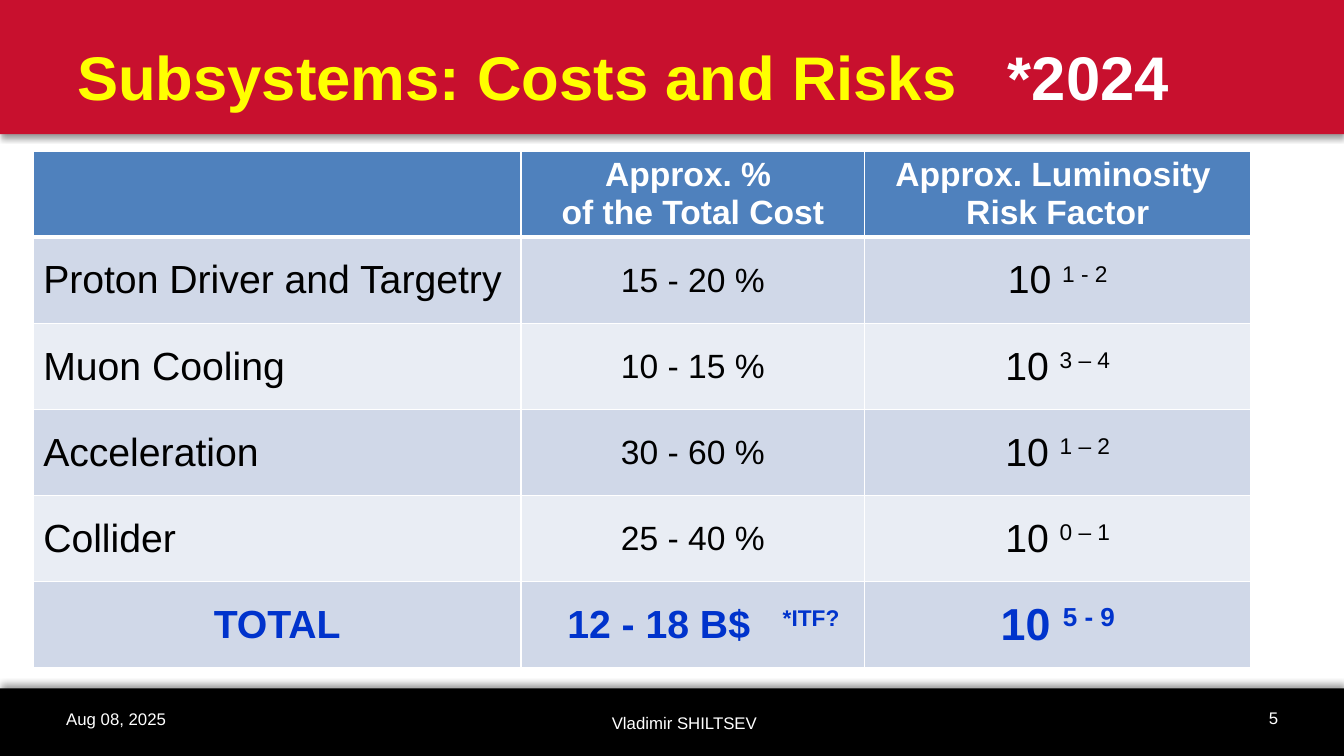
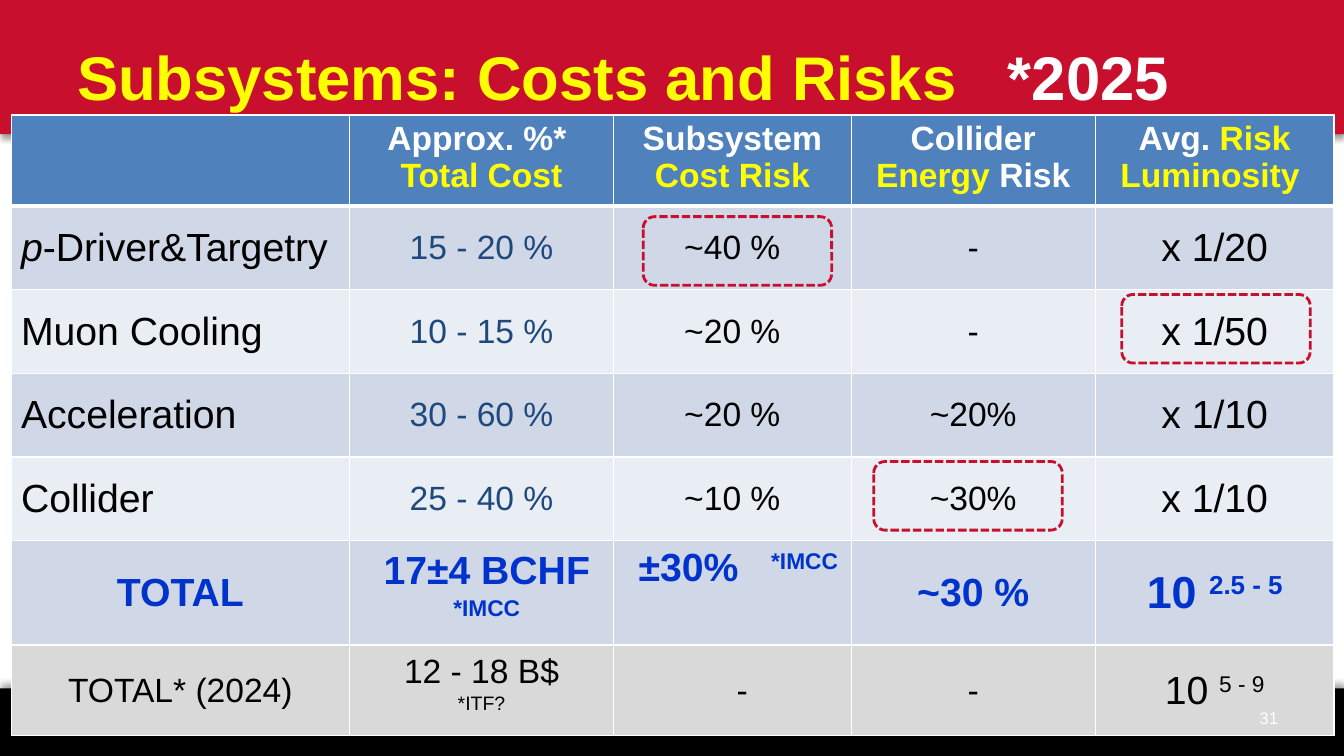
from pptx import Presentation
from pptx.dml.color import RGBColor as Rgb
from pptx.enum.dml import MSO_LINE as Dash
from pptx.enum.shapes import MSO_SHAPE as Kind
from pptx.enum.text import MSO_ANCHOR as Anchor, PP_ALIGN as Align
from pptx.oxml import parse_xml
from pptx.oxml.ns import nsdecls
from pptx.util import Cm, Pt

HUES = {
    "red": "C8102E", "black": "000000", "white": "FFFFFF", "yellow": "FFFF00",
    "head": "4F81BD", "odd": "D0D8E8", "even": "E9EDF4", "grey": "D9D9D9",
    "blue": "0033CC", "navy": "1F497D",
}

# Runs are split by "|"; a leading sign changes the format of a run
MARKS = {
    "^": {"baseline": "30000"},
    ">": {"spc": "1560"},
    "/": {"italic": True},
    "!": {"tone": "yellow"},
    "#": {"tone": "white"},
}

# Text formats
TITLE = {"size": Pt(44), "bold": True, "tone": "yellow"}
SMALL = {"size": Pt(12), "bold": False, "tone": "white"}
HEAD = {"size": Pt(24), "bold": True, "tone": "white"}
BODY = {"bold": False, "tone": "black"}
TOTAL = {"bold": True, "tone": "blue"}

# Shared layout, in cm: left, top, width, height
WIDE, HIGH = 33.87, 19.05
BANDS = [("black", 17.35, 1.7, 270), ("red", 0, 3.38, 90)]
SPOTS = {
    "title": ((1.7, 0.43, 29.03, 2.97), TITLE, Align.LEFT),
    "date": ((1.42, 17.6, 3.38, 1.02), SMALL, Align.LEFT),
    "name": ((14.25, 17.7, 5.08, 1.02), SMALL, Align.RIGHT),
    "page": ((27.38, 17.58, 5.08, 1.02), SMALL, Align.RIGHT),
}
YEAR_TAB = 23.45

DECK = [
    {
        "text": {"title": "Subsystems: Costs and Risks\t|#*2024", "page": "5",
                 "date": "Aug 08, 2025", "name": "Vladimir SHILTSEV"},
        "at": (0.84, 3.81),
        "cols": [12.29, 8.66, 9.73],
        "rows": [2.17] * 6,
        "sizes": [28, 24, 28],
        "tones": {},
        "cells": [
            ["", "Approx. % \nof the Total Cost", "Approx. Luminosity \nRisk Factor"],
            ["Proton Driver and Targetry", "15 - 20 %", "10 |^1 - 2"],
            ["Muon Cooling", "10 - 15 %", "10 |^3 – 4"],
            ["Acceleration", "30 - 60 %", "10 |^1 – 2"],
            ["Collider", "25 - 40 %", "10 |^0 – 1"],
            ["TOTAL", "12 - 18 B$|> |^*ITF?", "10 |^5 - 9"],
        ],
        "shifts": {(5, 1): 0.28},
        "tops": [],
        "rings": [],
    },
    {
        "text": {"title": "Subsystems: Costs and Risks\t|#*2025", "page": "31"},
        "at": (0.28, 2.9),
        "cols": [8.53, 6.65, 5.99, 6.15, 6.02],
        "rows": [2.24] + [2.11] * 4 + [2.46, 2.11],
        "sizes": [28, 24, 24, 24, 28],
        "tones": {1: "navy"},
        "cells": [
            ["", "Approx. %* \n!Total Cost", "Subsystem |!Cost Risk",
             "Collider |!Energy| Risk", "Avg. |!Risk Luminosity "],
            ["/p|-Driver&Targetry", "15 - 20 %", "~40 %", "-", "x 1/20"],
            ["Muon Cooling", "10 - 15 %", "~20 %", "-", "x 1/50"],
            ["Acceleration", "30 - 60 %", "~20 %", "~20%", "x 1/10"],
            ["Collider", "25 - 40 %", "~10 %", "~30%", "x 1/10"],
            ["TOTAL", "17±4 BCHF\n^*IMCC", "±30%|> |^*IMCC", "~30 %", "10 |^2.5 - 5"],
            ["TOTAL* (2024)", "12 - 18 B$\n^*ITF?", "-", "-", "10 |^5 - 9"],
        ],
        "shifts": {(5, 1): 0.13, (5, 2): 0.15, (6, 2): 0.25},
        "tops": [(5, 2)],
        "rings": [(16.21, 5.46), (22.02, 11.63), (28.27, 7.42)],
    },
]


def write(frame, text, style, align):
    for i, line in enumerate(text.split("\n")):
        para = frame.paragraphs[0] if i == 0 else frame.add_paragraph()
        para.alignment = align
        if "\t" in line:
            para._p.get_or_add_pPr().append(parse_xml(
                f'<a:tabLst {nsdecls("a")}><a:tab pos="{Cm(YEAR_TAB)}" algn="l"/></a:tabLst>'))
        for part in line.split("|"):
            mark = MARKS.get(part[:1], {})
            run = para.add_run()
            run.text = part[1:] if mark else part
            for key, val in {"name": "Arial", **style, **mark}.items():
                if key == "tone":
                    run.font.color.rgb = Rgb.from_string(HUES[val])
                elif key in ("baseline", "spc"):
                    run._r.get_or_add_rPr().set(key, val)
                else:
                    setattr(run.font, key, val)


def place(slide, spot, text):
    at, style, align = SPOTS[spot]
    frame = slide.shapes.add_textbox(*map(Cm, at)).text_frame
    frame.word_wrap = True
    frame.vertical_anchor = Anchor.MIDDLE
    write(frame, text, style, align)


deck = Presentation()
deck.slide_width, deck.slide_height = Cm(WIDE), Cm(HIGH)

for plan in DECK:
    slide = deck.slides.add_slide(deck.slide_layouts[6])

    # Bands with a soft shadow towards the middle
    for hue, top, high, turn in BANDS:
        band = slide.shapes.add_shape(Kind.RECTANGLE, 0, Cm(top), Cm(WIDE), Cm(high))
        band.fill.solid()
        band.fill.fore_color.rgb = Rgb.from_string(HUES[hue])
        band.line.fill.background()
        band._element.spPr.append(parse_xml(
            f'<a:effectLst {nsdecls("a")}><a:outerShdw blurRad="{Pt(4)}" dist="{Pt(3)}" '
            f'dir="{turn * 60000}" rotWithShape="0"><a:srgbClr val="{HUES["black"]}">'
            '<a:alpha val="40000"/></a:srgbClr></a:outerShdw></a:effectLst>'))

    # Table
    cols, rows = plan["cols"], plan["rows"]
    table = slide.shapes.add_table(
        len(rows), len(cols), *map(Cm, (*plan["at"], sum(cols), sum(rows)))).table
    for col, wide in zip(table.columns, cols):
        col.width = Cm(wide)
    for row, high in zip(table.rows, rows):
        row.height = Cm(high)

    for r, line in enumerate(plan["cells"]):
        for c, text in enumerate(line):
            cell = table.cell(r, c)
            size, align = plan["sizes"][c], Align.CENTER
            hue = "odd" if r % 2 else "even"
            if r == 0:
                style, hue = HEAD, "head"
            elif r == 5:
                style = {**TOTAL, "size": Pt(32 if c == len(cols) - 1 else 28)}
            elif r == 6:
                style, hue = {**BODY, "size": Pt(max(24, size if c else 24))}, "grey"
            else:
                style = {**BODY, "size": Pt(size), "tone": plan["tones"].get(c, "black")}
                align = Align.CENTER if c else Align.LEFT

            # White borders, thick below the header
            edges = {"L": 1, "R": 1, "T": 3 if r == 1 else 1, "B": 1 if r else 3}
            for side, thick in edges.items():
                cell._tc.get_or_add_tcPr().append(parse_xml(
                    f'<a:ln{side} {nsdecls("a")} w="{Pt(thick)}"><a:solidFill>'
                    f'<a:srgbClr val="{HUES["white"]}"/></a:solidFill></a:ln{side}>'))
            cell.fill.solid()
            cell.fill.fore_color.rgb = Rgb.from_string(HUES[hue])

            high_up = r == 0 or (r, c) in plan["tops"]
            cell.vertical_anchor = Anchor.TOP if high_up else Anchor.MIDDLE
            shift = plan["shifts"].get((r, c), 0)
            cell.margin_left, cell.margin_right = Cm(0.25 + shift), Cm(0.25 - min(shift, 0.25))
            write(cell.text_frame, text, style, align)

    # Title and footer
    for spot, text in plan["text"].items():
        place(slide, spot, text)

    # Dashed rings around the highest risks
    for left, top in plan["rings"]:
        ring = slide.shapes.add_shape(
            Kind.ROUNDED_RECTANGLE, Cm(left), Cm(top), Cm(4.75), Cm(1.73))
        ring.shadow.inherit = False
        ring.fill.background()
        ring.line.color.rgb = Rgb.from_string(HUES["red"])
        ring.line.width = Pt(2)
        ring.line.dash_style = Dash.SQUARE_DOT

deck.save("out.pptx")
